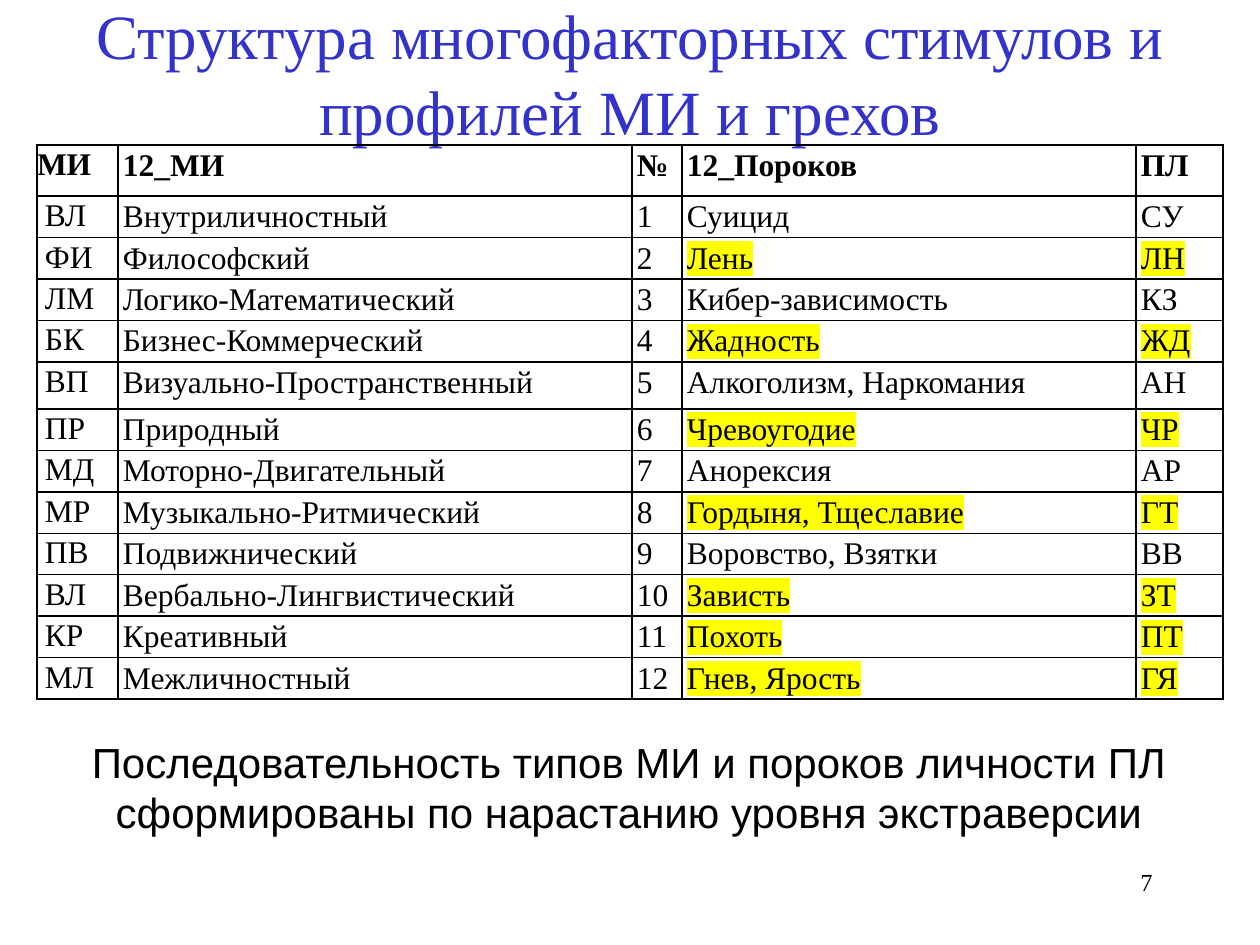
from lxml import etree
from pptx import Presentation
from pptx import util as u
from pptx.dml.color import RGBColor
from pptx.enum import text
from pptx.oxml import ns

PX = 914400 // 126
BLUE = RGBColor(0x33, 0x33, 0xCC)
BLACK = RGBColor(0, 0, 0)
YELLOW = RGBColor(0xFF, 0xFF, 0)
SERIF, SANS = "Times New Roman", "Arial"
ALIGN, ANCHOR = text.PP_ALIGN, text.MSO_ANCHOR


def write(para, words, size, align, face=SERIF, color=BLACK, bold=False):
    span = para.add_run()
    span.text = words
    para.alignment = align
    font = para.font
    font.name, font.size, font.bold = face, u.Pt(size), bold
    font.color.rgb = color
    return span


def add_color(parent, tag, color):
    holder = etree.SubElement(parent, ns.qn(tag))
    etree.SubElement(holder, ns.qn("a:srgbClr")).set("val", str(color))


deck = Presentation()
deck.slide_width, deck.slide_height = u.Inches(10), u.Inches(7.5)
page = deck.slides.add_slide(deck.slide_layouts[6])

# Title, page number and caption
boxes = [
    ((8, 5, 1244, 134), ["Структура многофакторных стимулов и профилей МИ и грехов"],
     36, ALIGN.CENTER, SERIF, BLUE, True, ANCHOR.MIDDLE),
    ((903, 861, 262, 63), ["7"], 14, ALIGN.RIGHT, SERIF, BLACK, True, ANCHOR.TOP),
    ((74, 730, 1110, 115), ["Последовательность типов МИ и пороков личности ПЛ",
                            "сформированы по нарастанию уровня экстраверсии"],
     24, ALIGN.CENTER, SANS, BLACK, False, ANCHOR.TOP),
]
for place, lines, size, align, face, color, wrap, anchor in boxes:
    box = page.shapes.add_textbox(*[n * PX for n in place])
    frame = box.text_frame
    frame.word_wrap, frame.vertical_anchor = wrap, anchor
    for i, line in enumerate(lines):
        para = frame.add_paragraph() if i else frame.paragraphs[0]
        write(para, line, size, align, face, color)

# Table: intelligence types beside vices
header = ("МИ", "12_МИ", "№", "12_Пороков", "ПЛ")
pairs = [
    ("ВЛ", "Внутриличностный", "Суицид", "СУ"),
    ("ФИ", "Философский", "Лень", "ЛН"),
    ("ЛМ", "Логико-Математический", "Кибер-зависимость", "КЗ"),
    ("БК", "Бизнес-Коммерческий", "Жадность", "ЖД"),
    ("ВП", "Визуально-Пространственный", "Алкоголизм, Наркомания", "АН"),
    ("ПР", "Природный", "Чревоугодие", "ЧР"),
    ("МД", "Моторно-Двигательный", "Анорексия", "АР"),
    ("МР", "Музыкально-Ритмический", "Гордыня, Тщеславие", "ГТ"),
    ("ПВ", "Подвижнический", "Воровство, Взятки", "ВВ"),
    ("ВЛ", "Вербально-Лингвистический", "Зависть", "ЗТ"),
    ("КР", "Креативный", "Похоть", "ПТ"),
    ("МЛ", "Межличностный", "Гнев, Ярость", "ГЯ"),
]
rows = [header] + [(code, kind, str(n), vice, short)
                   for n, (code, kind, vice, short) in enumerate(pairs, 1)]
highlighted = {2, 4, 6, 8, 10, 11, 12}
widths = [81, 514, 50, 454, 87]
heights = {0: 51, 5: 47}

table = page.shapes.add_table(len(rows), len(widths), 37 * PX, 145 * PX,
                              sum(widths) * PX, 527 * PX).table
for column, width in zip(table.columns, widths):
    column.width = width * PX
for r, row in enumerate(rows):
    table.rows[r].height = heights.get(r, 34) * PX
    for c, words in enumerate(row):
        cell = table.cell(r, c)
        indent = 5 if c else (8 if r else 0)
        cell.margin_left = indent * PX
        cell.margin_right = (5 if c else 0) * PX
        cell.margin_top = (1 if c else 0) * PX
        cell.margin_bottom = 0
        para = cell.text_frame.paragraphs[0]
        para.line_spacing = 1.07
        span = write(para, words, 18, ALIGN.JUSTIFY, bold=r == 0)
        if r in highlighted and c >= 3:
            add_color(span.font._element, "a:highlight", YELLOW)
        props = cell._tc.get_or_add_tcPr()
        for side in ("a:lnL", "a:lnR", "a:lnT", "a:lnB"):
            edge = etree.SubElement(props, ns.qn(side))
            edge.set("w", str(u.Pt(1)))
            add_color(edge, "a:solidFill", BLACK)
        cell.fill.background()

deck.save("out.pptx")
